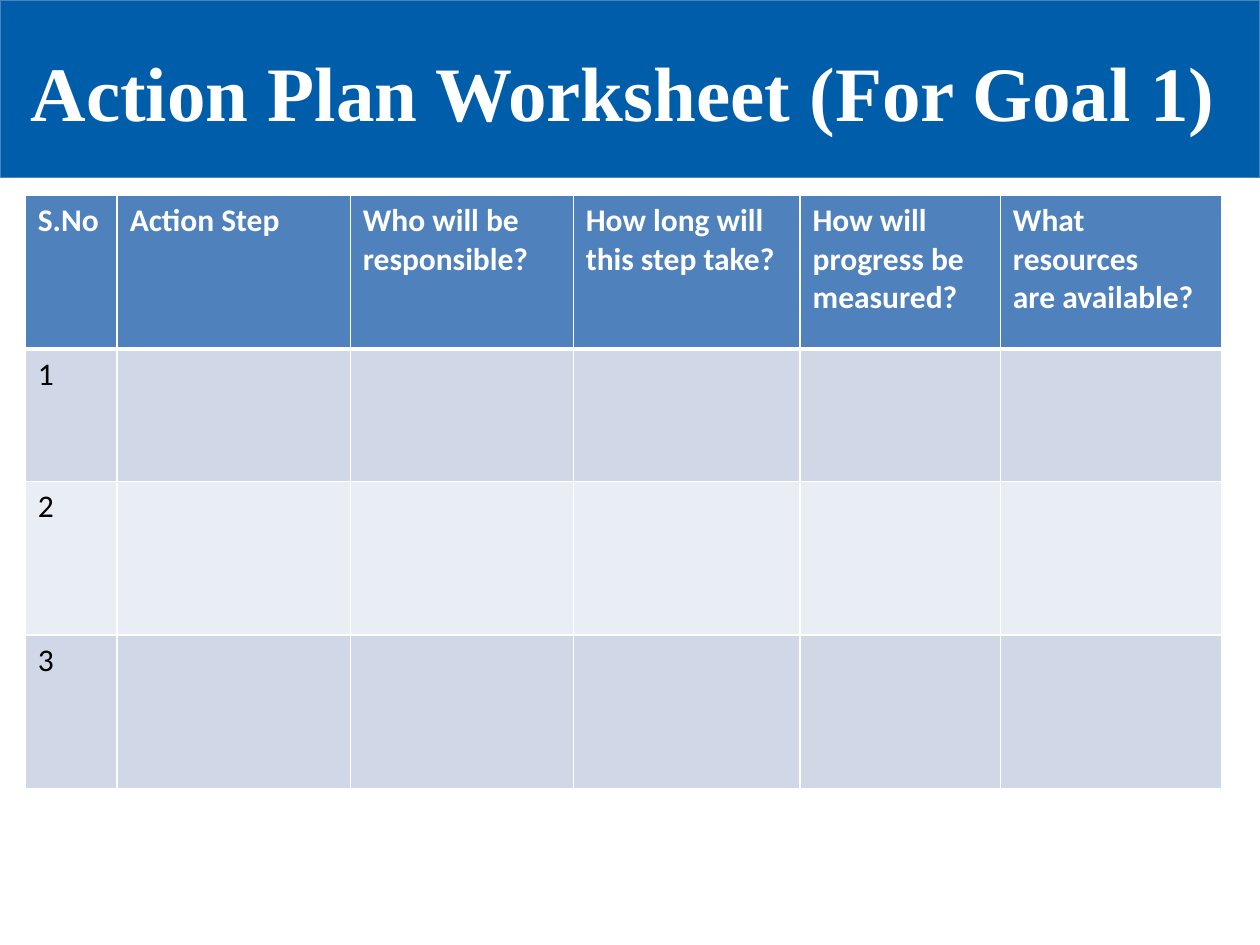
from lxml.etree import SubElement
from pptx import Presentation
from pptx.dml.color import RGBColor
from pptx.enum.shapes import MSO_SHAPE
from pptx.enum.text import MSO_ANCHOR, PP_ALIGN
from pptx.oxml.ns import qn
from pptx.util import Inches, Pt

WHITE, BLACK = "FFFFFF", "000000"
BANNER_BLUE, HEADER_BLUE = "005DAA", "4F81BD"
BANDS = ("D0D8E8", "E9EDF4")
COLUMN_WIDTHS = (0.73, 1.85, 1.77, 1.8, 1.59, 1.76)
ROW_HEIGHTS = (1.22, 1.05, 1.22, 1.22)
HEADINGS = (
    ["S.No"],
    ["Action Step"],
    ["Who will be responsible?"],
    ["How long will this step take?"],
    ["How will progress be measured?"],
    ["What resources", "are available?"],
)


def color(hex_value):
    return RGBColor.from_string(hex_value)


def add_text(para, text, size, font_name, hex_value, bold=False):
    span = para.add_run()
    span.text = text
    span.font.size = Pt(size)
    span.font.name = font_name
    span.font.bold = bold
    span.font.color.rgb = color(hex_value)


def add_banner(page, left, top, width, height):
    banner = page.shapes.add_shape(
        MSO_SHAPE.RECTANGLE, Inches(left), Inches(top), Inches(width), Inches(height))
    banner.shadow.inherit = False
    banner.fill.solid()
    banner.fill.fore_color.rgb = color(BANNER_BLUE)
    banner.line.color.rgb = color(HEADER_BLUE)
    banner.line.width = Pt(0.75)

    title = page.shapes.add_textbox(
        Inches(left + 0.1), Inches(top + 0.38), Inches(width - 0.31), Inches(0.82))
    frame = title.text_frame
    frame.word_wrap = True
    frame.vertical_anchor = MSO_ANCHOR.MIDDLE
    para = frame.paragraphs[0]
    para.alignment = PP_ALIGN.CENTER
    para.line_spacing = 0.8
    add_text(para, "Action Plan Worksheet (For Goal 1)", 44, "Times New Roman", WHITE, True)


def set_borders(cell, top, bottom):
    """Draw white borders: 1 pt at the sides, the given points above and below."""
    properties = cell._tc.get_or_add_tcPr()
    for side, points in (("L", 1), ("R", 1), ("T", top), ("B", bottom)):
        line = SubElement(properties, qn(f"a:ln{side}"), w=str(Pt(points)))
        fill = SubElement(line, qn("a:solidFill"))
        SubElement(fill, qn("a:srgbClr"), val=WHITE)


def fill_cell(cell, lines, fill, text_color, bold):
    cell.fill.solid()
    cell.fill.fore_color.rgb = color(fill)
    frame = cell.text_frame
    frame.paragraphs[0].font.size = Pt(18)
    for index, text in enumerate(lines):
        para = frame.add_paragraph() if index else frame.paragraphs[0]
        add_text(para, text, 18, "Calibri", text_color, bold)


def add_worksheet(page, left, top):
    table = page.shapes.add_table(
        len(ROW_HEIGHTS), len(COLUMN_WIDTHS), Inches(left), Inches(top),
        Inches(sum(COLUMN_WIDTHS)), Inches(sum(ROW_HEIGHTS))).table
    for column, width in zip(table.columns, COLUMN_WIDTHS):
        column.width = Inches(width)
    for number, (row, height) in enumerate(zip(table.rows, ROW_HEIGHTS)):
        row.height = Inches(height)
        is_header = number == 0
        for index, cell in enumerate(row.cells):
            set_borders(cell, top=3 if number == 1 else 1, bottom=3 if is_header else 1)
            if is_header:
                fill_cell(cell, HEADINGS[index], HEADER_BLUE, WHITE, True)
            else:
                lines = [str(number)] if index == 0 else []
                fill_cell(cell, lines, BANDS[(number - 1) % 2], BLACK, False)


def main():
    deck = Presentation()
    deck.slide_width, deck.slide_height = Inches(10), Inches(7.5)
    page = deck.slides.add_slide(deck.slide_layouts[6])
    add_banner(page, 0, 0, 10, 1.41)
    add_worksheet(page, 0.2, 1.55)
    deck.save("out.pptx")


if __name__ == "__main__":
    main()
